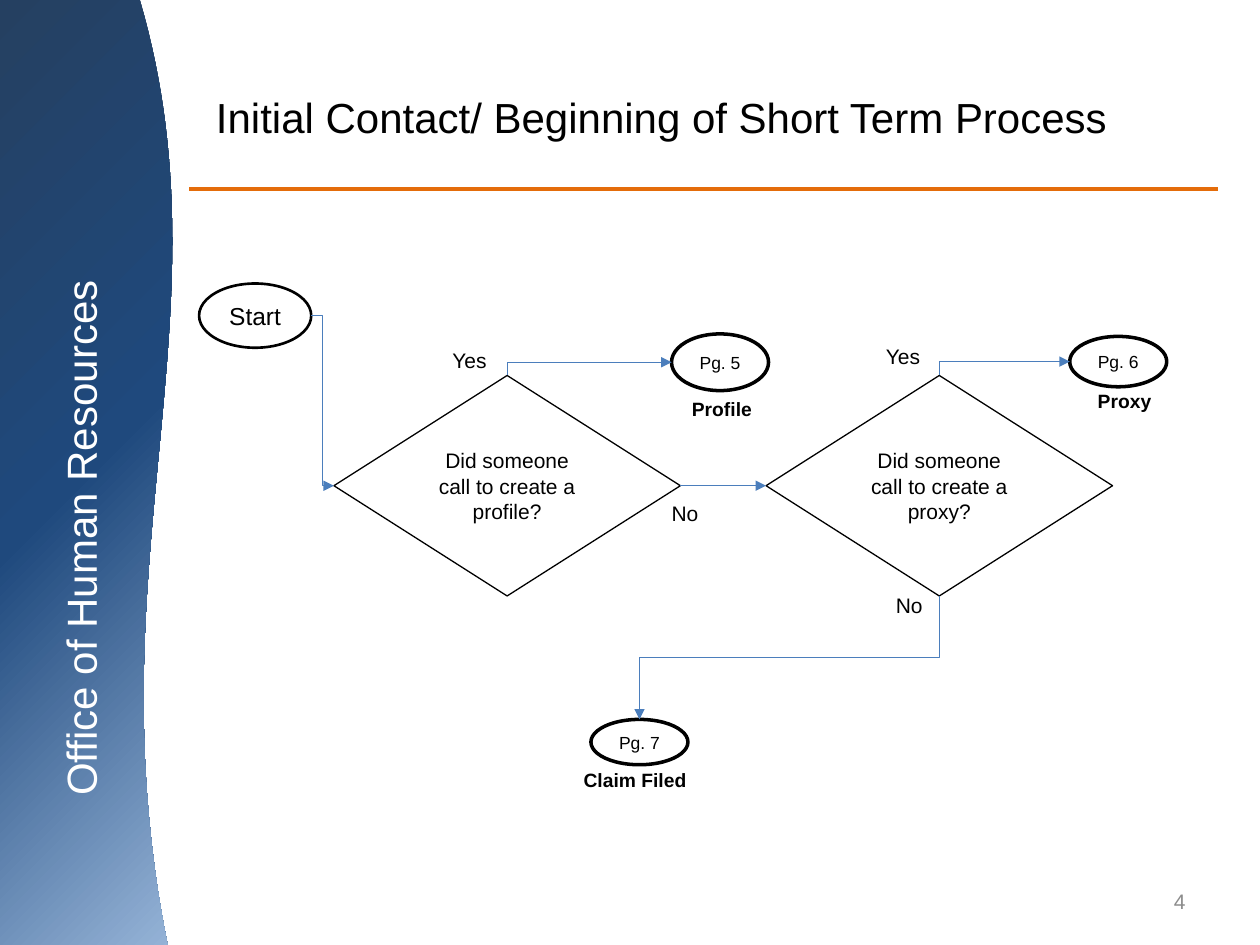
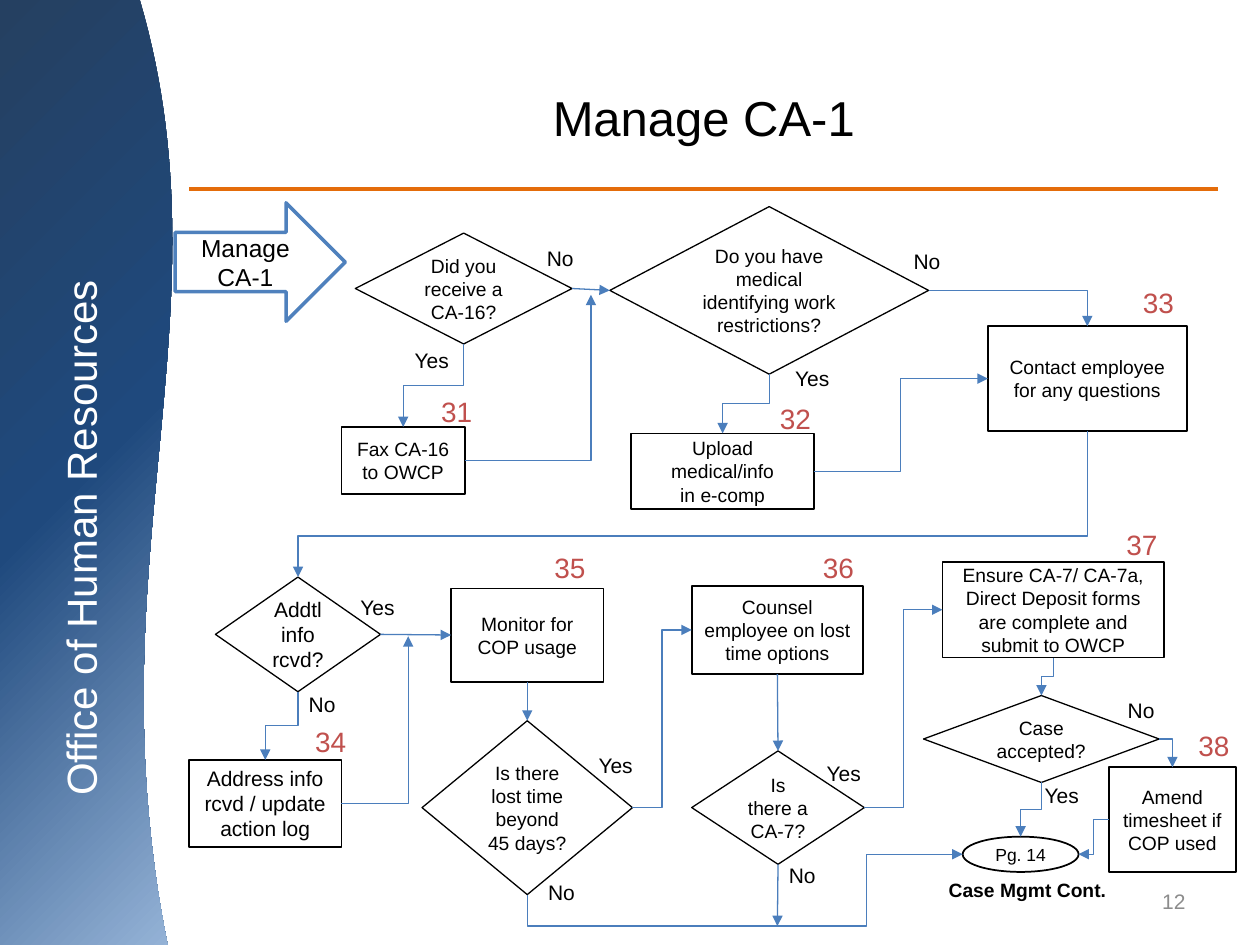
import pptx
import pptx.util
import pptx.dml.color
import pptx.enum.shapes
import pptx.enum.text
import pptx.oxml.ns
import lxml.etree

Inches = pptx.util.Inches
qn = pptx.oxml.ns.qn
SHAPE = pptx.enum.shapes.MSO_SHAPE
CONNECTOR = pptx.enum.shapes.MSO_CONNECTOR
ALIGN = pptx.enum.text.PP_ALIGN
ANCHOR = pptx.enum.text.MSO_ANCHOR
TOP, LEFT, BOTTOM, RIGHT = range(4)

THEME = {
    "font": "Arial",
    "ink": "000000", "paper": "FFFFFF", "accent": "E46C0A", "arrow": "4B7EBC",
    "entry": "4F81BD", "step": "C0504D", "number": "8C8C8C",
    "band": [(0, "254061"), (50, "1F497D"), (100, "95B3D7")],
    "small": 10, "text": 11, "label": 12, "start": 14, "step_size": 16, "department": 24,
}

NODE_STYLES = {
    "decision": (SHAPE.FLOWCHART_DECISION, "ink", 0.75, None),
    "process": (SHAPE.FLOWCHART_PROCESS, "ink", 1, None),
    "start": (SHAPE.FLOWCHART_CONNECTOR, "ink", 1.5, None),
    "next": (SHAPE.FLOWCHART_CONNECTOR, "ink", 1, None),
    "page": (SHAPE.OVAL, "ink", 2, "paper"),
    "entry": (SHAPE.RIGHT_ARROW, "entry", 2, "paper"),
}

SLIDES = [
    {
        "title": "Initial Contact/ Beginning of Short Term Process",
        "title_width": 7.5, "title_size": 24, "number": "4",
        "nodes": {
            "profile": ("decision", 2.65, 2.98, 2.75, 1.75, "Did someone call to create a profile?", "label"),
            "proxy": ("decision", 6.08, 2.98, 2.75, 1.75, "Did someone call to create a proxy?", "label"),
            "start": ("start", 1.58, 2.25, 0.89, 0.51, "Start", "start"),
            "page 5": ("page", 5.33, 2.65, 0.77, 0.45, "Pg. 5", "small"),
            "page 6": ("page", 8.49, 2.67, 0.77, 0.4, "Pg. 6", "small"),
            "page 7": ("page", 4.69, 5.71, 0.77, 0.36, "Pg. 7", "small"),
        },
        "links": [
            ("start", RIGHT, "profile", LEFT, []),
            ("profile", TOP, "page 5", LEFT, []),
            ("profile", RIGHT, "proxy", LEFT, []),
            ("proxy", TOP, "page 6", LEFT, []),
            ("proxy", BOTTOM, "page 7", TOP, []),
        ],
        "answers": [("No", 5.24, 3.92), ("No", 7.02, 4.65), ("Yes", 3.5, 2.71), ("Yes", 6.94, 2.68)],
        "steps": [],
        "captions": [("Profile", 5.23, 3.1, 1), ("Proxy", 8.55, 3.04, 0.75), ("Claim Filed", 4.5, 6.05, 1.08)],
    },
    {
        "title": "Manage CA-1",
        "title_width": 8.17, "title_size": 28, "number": "12",
        "nodes": {
            "entry": ("entry", 1.39, 1.61, 1.35, 0.94, "Manage CA-1", "start"),
            "receive": ("decision", 2.82, 1.85, 1.72, 0.88, "Did you receive a CA-16?", "text"),
            "medical": ("decision", 4.84, 1.64, 2.53, 1.33, "Do you have medical identifying work restrictions?", "text"),
            "contact": ("process", 7.84, 2.59, 1.58, 0.83, "Contact employee for any questions", "text"),
            "upload": ("process", 5.01, 3.44, 1.45, 0.6, "Upload medical/info\nin e-comp", "text"),
            "fax": ("process", 2.71, 3.39, 0.98, 0.53, "Fax CA-16 to OWCP", "text"),
            "monitor": ("process", 3.58, 4.67, 1.21, 0.74, "Monitor for COP usage", "text"),
            "form": ("decision", 5.49, 5.96, 1.37, 0.9, "Is there a CA-7?", "text"),
            "ensure": ("process", 7.48, 4.46, 1.76, 0.76,
                       "Ensure CA-7/ CA-7a, Direct Deposit forms are complete and submit to OWCP", "text"),
            "lost time": ("decision", 3.35, 5.72, 1.67, 1.38, "Is there lost time beyond 45 days?", "text"),
            "counsel": ("process", 5.49, 4.65, 1.36, 0.7, "Counsel employee on lost time options", "text"),
            "info": ("decision", 1.71, 4.58, 1.31, 0.91, "Addtl info rcvd?", "label"),
            "address": ("process", 1.5, 6.03, 1.21, 0.69, "Address info rcvd / update action log", "label"),
            "page 14": ("next", 7.64, 6.64, 0.92, 0.28, "Pg. 14", "small"),
            "accepted": ("decision", 7.33, 5.52, 1.87, 0.69, "Case accepted?", "text"),
            "amend": ("process", 8.8, 6.09, 1.01, 0.83, "Amend timesheet if COP used", "text"),
        },
        "links": [
            ("receive", RIGHT, "medical", LEFT, []),
            ("receive", BOTTOM, "fax", TOP, []),
            ("fax", RIGHT, (4.69, 2.34), BOTTOM, []),
            ("medical", BOTTOM, "upload", TOP, []),
            ("upload", RIGHT, "contact", LEFT, []),
            ("medical", RIGHT, "contact", TOP, []),
            ("contact", BOTTOM, "info", TOP, [0.72]),
            ("info", RIGHT, "monitor", LEFT, []),
            ("info", BOTTOM, "address", TOP, []),
            ("monitor", BOTTOM, "lost time", TOP, []),
            ("address", RIGHT, (3.24, 5.05), BOTTOM, []),
            ("lost time", RIGHT, "counsel", LEFT, []),
            ("counsel", BOTTOM, "form", TOP, []),
            ("form", RIGHT, "ensure", LEFT, []),
            ("lost time", BOTTOM, "page 14", LEFT, [-0.78, 0.78]),
            ("form", BOTTOM, (6.17, 7.35), TOP, []),
            ("accepted", BOTTOM, "page 14", TOP, []),
            ("ensure", BOTTOM, "accepted", TOP, []),
            ("accepted", RIGHT, "amend", TOP, []),
            ("amend", LEFT, "page 14", RIGHT, []),
        ],
        "answers": [
            ("No", 4.25, 1.9), ("Yes", 3.2, 2.71), ("No", 6.17, 6.8), ("Yes", 4.66, 5.92),
            ("No", 7.16, 1.92), ("Yes", 6.47, 5.99), ("No", 4.26, 6.93), ("Yes", 2.77, 4.67),
            ("No", 2.36, 5.44), ("Yes", 6.22, 2.85), ("Yes", 8.2, 6.16), ("No", 8.86, 5.49),
        ],
        "steps": [
            ("31", 3.41, 3.08), ("32", 6.1, 3.14), ("33", 8.98, 2.22), ("34", 2.41, 5.7),
            ("35", 4.31, 4.32), ("36", 6.44, 4.32), ("37", 8.85, 4.14), ("38", 9.42, 5.73),
        ],
        "captions": [("Case Mgmt Cont.", 7.36, 6.92, 1.59)],
    },
]


def write(box, text, size, color="ink", align=ALIGN.CENTER, anchor=ANCHOR.MIDDLE, wrap=True, bold=False):
    frame = box.text_frame
    frame.text = text
    settings = {"word_wrap": wrap, "vertical_anchor": anchor, "auto_size": pptx.enum.text.MSO_AUTO_SIZE.NONE,
                "margin_left": Inches(0.09), "margin_right": Inches(0.09)}
    for name, value in settings.items():
        setattr(frame, name, value)
    formats = {"name": THEME["font"], "size": pptx.util.Pt(size), "bold": bold}
    for para in frame.paragraphs:
        para.alignment = align
        for span in para.runs:
            for name, value in formats.items():
                setattr(span.font, name, value)
            span.font.color.rgb = pptx.dml.color.RGBColor.from_string(THEME[color])


def add_line(page, kind, begin, end, color, width):
    line = page.shapes.add_connector(kind, *(Inches(value) for value in (*begin, *end)))
    line.line.color.rgb = pptx.dml.color.RGBColor.from_string(THEME[color])
    line.line.width = pptx.util.Pt(width)
    lxml.etree.SubElement(line.element.spPr, qn("a:effectLst"))
    return line


deck = pptx.Presentation()
deck.slide_width, deck.slide_height = Inches(10), Inches(7.5)
pages = [deck.slides.add_slide(deck.slide_layouts[5]) for content in SLIDES]

curve_x, curve_y = (1.11, 1.84, 0.72, 1.33), (0, 2.51, 4.46, 7.5)
edge = []
for index in range(61):
    t = index / 60
    weights = ((1 - t) ** 3, 3 * t * (1 - t) ** 2, 3 * t * t * (1 - t), t ** 3)
    edge.append(tuple(Inches(sum(w * value for w, value in zip(weights, axis))) for axis in (curve_x, curve_y)))
outline = pages[0].shapes.build_freeform(0, 0, scale=1.0)
outline.add_line_segments(edge + [(0, Inches(7.5))], close=True)
band = outline.convert_to_shape()
band.shadow.inherit = False
band.line.fill.background()
band.fill.gradient()
band.fill.gradient_angle = 315
stops = band.element.spPr.find(".//" + qn("a:gsLst"))
for stop in list(stops):
    stops.remove(stop)
for position, color in THEME["band"]:
    stop = lxml.etree.SubElement(stops, qn("a:gs"), pos=str(position * 1000))
    lxml.etree.SubElement(stop, qn("a:srgbClr"), val=color)

department = pages[0].shapes.add_textbox(Inches(-2.12), Inches(3.99), Inches(5.47), Inches(0.56))
department.rotation = 270
write(department, "Office of Human Resources", THEME["department"], "paper", anchor=ANCHOR.TOP)
department.text_frame.margin_top = Inches(0.1)
rule = add_line(pages[0], CONNECTOR.STRAIGHT, (1.5, 1.5), (9.67, 1.5), "accent", 2.25)
for shared in (band, department, rule):
    deck.slide_master.shapes.element.append(shared.element)

for page, content in zip(pages, SLIDES):
    title = page.shapes.title
    title.left, title.top = Inches(1.5), Inches(0.3)
    title.width, title.height = Inches(content["title_width"]), Inches(1.25)
    write(title, content["title"], content["title_size"])

    number = page.shapes.add_textbox(Inches(7.17), Inches(6.95), Inches(2.33), Inches(0.4))
    write(number, content["number"], THEME["label"], "number", ALIGN.RIGHT)

    boxes, sides = {}, {}
    for name, (style, x, y, width, height, text, size) in content["nodes"].items():
        preset, outline_color, weight, fill = NODE_STYLES[style]
        box = page.shapes.add_shape(preset, Inches(x), Inches(y), Inches(width), Inches(height))
        box.shadow.inherit = False
        box.line.color.rgb = pptx.dml.color.RGBColor.from_string(THEME[outline_color])
        box.line.width = pptx.util.Pt(weight)
        if fill:
            box.fill.solid()
            box.fill.fore_color.rgb = pptx.dml.color.RGBColor.from_string(THEME[fill])
        else:
            box.fill.background()
        write(box, text, THEME[size])
        boxes[name] = box
        sides[name] = [(x + width / 2, y), (x, y + height / 2),
                       (x + width / 2, y + height), (x + width, y + height / 2)]

    for source, source_side, target, target_side, bends in content["links"]:
        begin = sides[source][source_side]
        end = sides[target][target_side] if target in sides else target
        run, drop = end[0] - begin[0], end[1] - begin[1]
        if min(abs(run), abs(drop)) < 0.03:
            link = add_line(page, CONNECTOR.STRAIGHT, begin, end, "arrow", 0.75)
            link.begin_connect(boxes[source], source_side)
            if target in boxes:
                link.end_connect(boxes[target], target_side)
        else:
            vertical = source_side in (TOP, BOTTOM)
            if vertical:
                middle_x, middle_y = (begin[0] + end[0]) / 2, (begin[1] + end[1]) / 2
                begin = (middle_x - drop / 2, middle_y + run / 2)
                end = (middle_x + drop / 2, middle_y - run / 2)
            link = add_line(page, CONNECTOR.ELBOW, begin, end, "arrow", 0.75)
            if vertical:
                link.element.spPr.find(qn("a:xfrm")).set("rot", "5400000")
            turns = 3 if source_side % 2 == target_side % 2 else 2
            if len(bends) == 2:
                turns = 4
            geometry = link.element.spPr.find(qn("a:prstGeom"))
            geometry.set("prst", f"bentConnector{turns}")
            for order, bend in enumerate(bends, 1):
                guide = f"adj{order}"
                lxml.etree.SubElement(geometry.find(qn("a:avLst")), qn("a:gd"),
                                      name=guide, fmla=f"val {round(bend * 100000)}")
        lxml.etree.SubElement(link.line._get_or_add_ln(), qn("a:tailEnd"), type="triangle")

    for text, x, y in content["answers"]:
        answer = page.shapes.add_textbox(Inches(x), Inches(y), Inches(0.42 if text == "No" else 0.48), Inches(0.3))
        write(answer, text, THEME["label"], align=ALIGN.LEFT, anchor=ANCHOR.TOP, wrap=False)
    for text, x, y in content["steps"]:
        step = page.shapes.add_textbox(Inches(x), Inches(y), Inches(0.45), Inches(0.37))
        write(step, text, THEME["step_size"], "step", ALIGN.LEFT, ANCHOR.TOP, wrap=False)
    for text, x, y, width in content["captions"]:
        caption = page.shapes.add_textbox(Inches(x), Inches(y), Inches(width), Inches(0.29))
        write(caption, text, THEME["text"], anchor=ANCHOR.TOP, bold=True)

deck.save("out.pptx")
